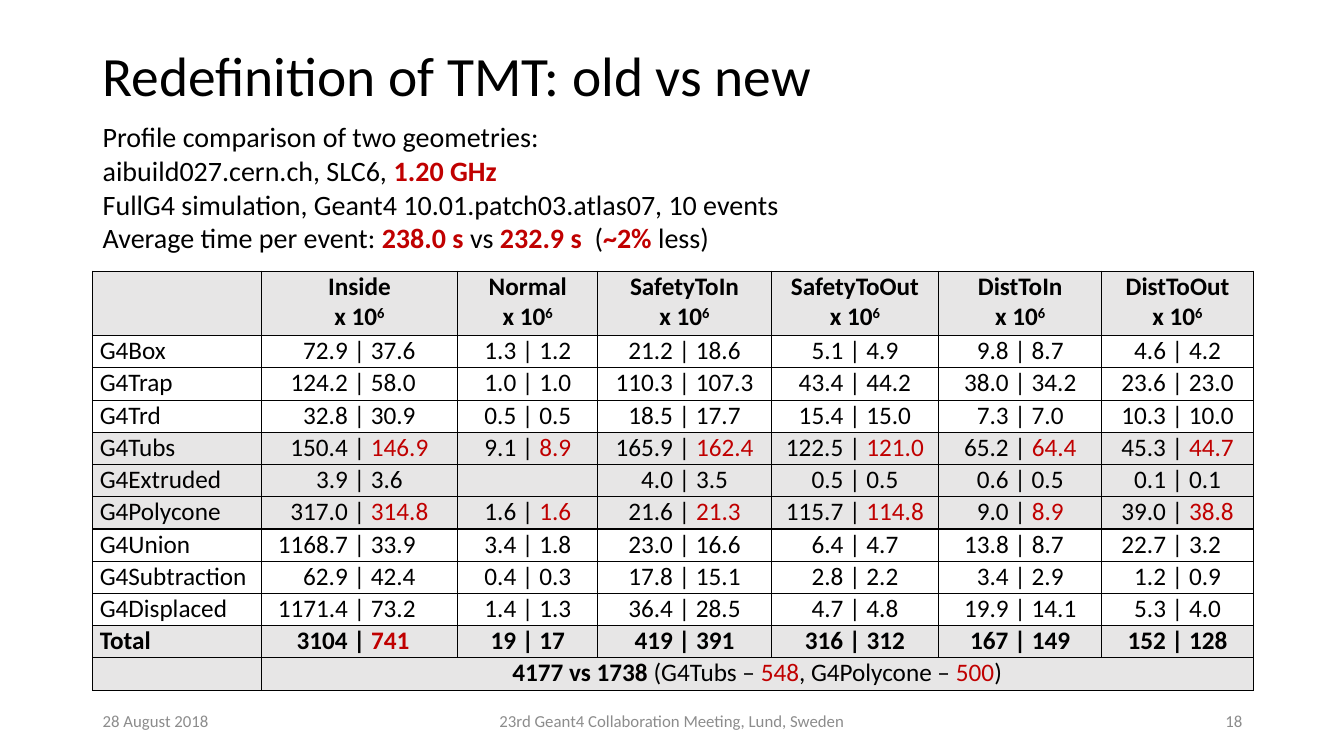
from lxml.etree import SubElement
from pptx import Presentation
from pptx.dml.color import RGBColor
from pptx.enum.text import MSO_ANCHOR as Anchor, PP_ALIGN as Align
from pptx.oxml.ns import qn
from pptx.util import Inches, Pt

WIDTH, HEIGHT = 13.33, 7.5
LEFT, CONTENT = 0.92, 11.5
BLACK, RED, GREY, SHADE, WHITE = "000000", "C00000", "8C8C8C", "E7E6E6", "FFFFFF"

COLUMN_WIDTHS = [1.67, 1.95, 1.39, 1.72, 1.66, 1.62, 1.5]
TABLE_TOP, HEADER_HEIGHT, ROW_HEIGHT = 2.69, 0.64, 0.32
CELL_MARGIN, DIGIT = 0.07, 0.125
METHODS = ["Inside", "Normal", "SafetyToIn", "SafetyToOut", "DistToIn", "DistToOut"]
SOLIDS = [
    ["G4Box", "72.9 | 37.6", "1.3 | 1.2", "21.2 | 18.6", "5.1 | 4.9", "9.8 | 8.7", "4.6 | 4.2"],
    ["G4Trap", "124.2 | 58.0", "1.0 | 1.0", "110.3 | 107.3", "43.4 | 44.2", "38.0 | 34.2",
     "23.6 | 23.0"],
    ["G4Trd", "32.8 | 30.9", "0.5 | 0.5", "18.5 | 17.7", "15.4 | 15.0", "7.3 | 7.0",
     "10.3 | 10.0"],
    ["G4Tubs", "150.4 | 146.9", "9.1 | 8.9", "165.9 | 162.4", "122.5 | 121.0", "65.2 | 64.4",
     "45.3 | 44.7"],
    ["G4Extruded", "3.9 | 3.6", "", "4.0 | 3.5", "0.5 | 0.5", "0.6 | 0.5", "0.1 | 0.1"],
    ["G4Polycone", "317.0 | 314.8", "1.6 | 1.6", "21.6 | 21.3", "115.7 | 114.8", "9.0 | 8.9",
     "39.0 | 38.8"],
    ["G4Union", "1168.7 | 33.9", "3.4 | 1.8", "23.0 | 16.6", "6.4 | 4.7", "13.8 | 8.7",
     "22.7 | 3.2"],
    ["G4Subtraction", "62.9 | 42.4", "0.4 | 0.3", "17.8 | 15.1", "2.8 | 2.2", "3.4 | 2.9",
     "1.2 | 0.9"],
    ["G4Displaced", "1171.4 | 73.2", "1.4 | 1.3", "36.4 | 28.5", "4.7 | 4.8", "19.9 | 14.1",
     "5.3 | 4.0"],
    ["Total", "3104 | 741", "19 | 17", "419 | 391", "316 | 312", "167 | 149", "152 | 128"],
]
SHADED = {"G4Tubs", "G4Extruded", "G4Polycone", "Total"}
RED_ROWS = {"G4Tubs", "G4Polycone"}
# Digits by which a value pair is moved off centre, to line up the bars
SHIFTS = {"124.2 | 58.0": 1, "1168.7 | 33.9": 2, "13.8 | 8.7": 1, "22.7 | 3.2": 1,
          "1171.4 | 73.2": 2, "3104 | 741": 1}


def colour(value):
    return RGBColor.from_string(value)


def add_text(para, text, size=18, color=BLACK, bold=False, raised=False):
    """Append text to a paragraph, with each newline as a line break."""
    for index, line in enumerate(text.split("\n")):
        if index:
            para.add_line_break()
        if not line:
            continue
        span = para.add_run()
        span.text = line
        span.font.name = "Calibri"
        span.font.size = Pt(size)
        span.font.bold = bold
        span.font.color.rgb = colour(color)
        if raised:
            span.font._element.set("baseline", "30000")


def add_box(page, left, top, width, height, align=Align.LEFT, anchor=Anchor.MIDDLE):
    """Add a wrapped text box and return its first paragraph."""
    box = page.shapes.add_textbox(*map(Inches, (left, top, width, height)))
    frame = box.text_frame
    frame.word_wrap = True
    frame.vertical_anchor = anchor
    frame.paragraphs[0].alignment = align
    return frame.paragraphs[0]


def style_cell(cell, fill, align=Align.CENTER, shift=0):
    """Format a cell and return its paragraph."""
    cell.margin_left = Inches(CELL_MARGIN)
    cell.margin_right = Inches(CELL_MARGIN + shift * DIGIT)
    cell.margin_top = cell.margin_bottom = 0
    properties = cell._tc.get_or_add_tcPr()
    for side in ("a:lnL", "a:lnR", "a:lnT", "a:lnB"):
        line = SubElement(properties, qn(side), w=str(Pt(1)))
        SubElement(SubElement(line, qn("a:solidFill")), qn("a:srgbClr"), val=BLACK)
    cell.fill.solid()
    cell.fill.fore_color.rgb = colour(fill)
    para = cell.text_frame.paragraphs[0]
    para.alignment = align
    return para


def fill_header(table):
    style_cell(table.cell(0, 0), SHADE)
    for column, method in enumerate(METHODS, 1):
        para = style_cell(table.cell(0, column), SHADE)
        add_text(para, f"{method}\nx 10", bold=True)
        add_text(para, "6", bold=True, raised=True)


def fill_solid(table, row, values):
    """Fill one row: the name of the solid, then old and new counts."""
    name, *pairs = values
    fill = SHADE if name in SHADED else WHITE
    bold = name == "Total"
    add_text(style_cell(table.cell(row, 0), fill, Align.LEFT), name, bold=bold)
    for column, pair in enumerate(pairs, 1):
        para = style_cell(table.cell(row, column), fill, shift=SHIFTS.get(pair, 0))
        if name in RED_ROWS or (bold and column == 1):
            old, new = pair.split("| ")
            add_text(para, old + "| ", bold=bold)
            add_text(para, new, color=RED, bold=bold)
        else:
            add_text(para, pair, bold=bold)


def fill_summary(table, row):
    for column in range(len(COLUMN_WIDTHS)):
        style_cell(table.cell(row, column), SHADE)
    first = table.cell(row, 1)
    first.merge(table.cell(row, len(METHODS)))
    para = first.text_frame.paragraphs[0]
    add_text(para, "4177 vs 1738 ", bold=True)
    for text, color in (("(G4Tubs – ", BLACK), ("548", RED), (", G4Polycone – ", BLACK),
                        ("500", RED), (")", BLACK)):
        add_text(para, text, color=color)


def add_profile_table(page):
    rows = len(SOLIDS) + 2
    heights = [HEADER_HEIGHT] + [ROW_HEIGHT] * (rows - 1)
    table = page.shapes.add_table(rows, len(COLUMN_WIDTHS), Inches(LEFT), Inches(TABLE_TOP),
                                  Inches(CONTENT), Inches(sum(heights))).table
    table.first_row = table.horz_banding = False
    for column, width in zip(table.columns, COLUMN_WIDTHS):
        column.width = Inches(width)
    for row, height in zip(table.rows, heights):
        row.height = Inches(height)
    fill_header(table)
    for row, values in enumerate(SOLIDS, 1):
        fill_solid(table, row, values)
    fill_summary(table, rows - 1)


def add_intro(page):
    para = add_box(page, LEFT, 1.14, CONTENT, 1.45, anchor=Anchor.TOP)
    for text, marked in (
        ("Profile comparison of two geometries:\naibuild027.cern.ch, SLC6, ", False),
        ("1.20 GHz\n", True),
        ("FullG4 simulation, Geant4 10.01.patch03.atlas07, 10 events\n", False),
        ("Average time per event: ", False),
        ("238.0 s ", True), ("vs ", False), ("232.9 s ", True),
        (" (", False), ("~2% ", True), ("less)", False),
    ):
        add_text(para, text, size=20, color=RED if marked else BLACK, bold=marked)


def add_footer(page):
    side, middle = 3, 4.5
    for text, left, width, align in (
        ("28 August 2018", LEFT, side, Align.LEFT),
        ("23rd Geant4 Collaboration Meeting, Lund, Sweden", (WIDTH - middle) / 2, middle,
         Align.CENTER),
        ("18", LEFT + CONTENT - side, side, Align.RIGHT),
    ):
        add_text(add_box(page, left, 6.95, width, 0.4, align), text, size=12, color=GREY)


def main():
    deck = Presentation()
    deck.slide_width, deck.slide_height = Inches(WIDTH), Inches(HEIGHT)
    page = deck.slides.add_slide(deck.slide_layouts[6])
    title = add_box(page, LEFT, 0.4, CONTENT, 0.75)
    title.line_spacing = 0.9
    add_text(title, "Redefinition of TMT: old vs new", size=39.6)
    add_profile_table(page)
    add_intro(page)
    add_footer(page)
    deck.save("out.pptx")


if __name__ == "__main__":
    main()
